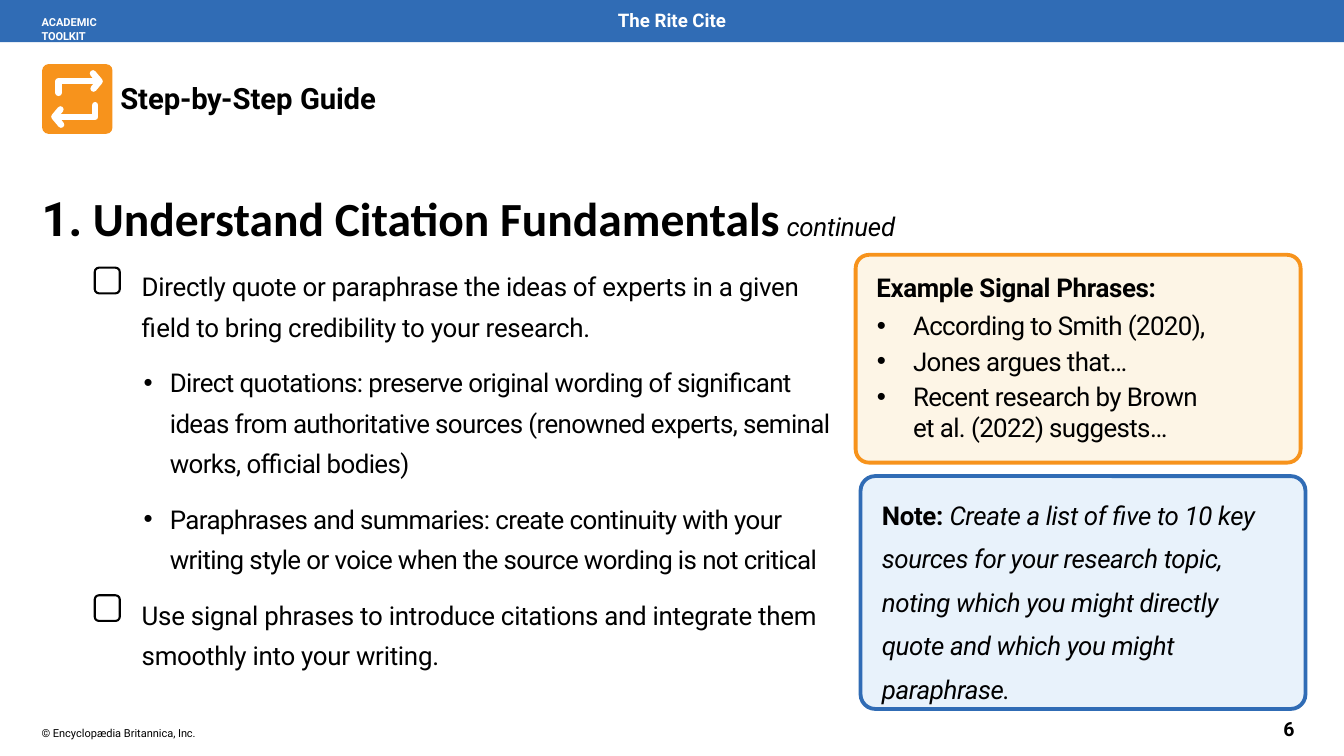
"""Build the citation fundamentals slide with its checklist, examples and note."""
import pptx
import pptx.util
import pptx.dml.color
import pptx.enum.shapes
import pptx.enum.text
import pptx.oxml

Inches = pptx.util.Inches
Pt = pptx.util.Pt
RGBColor = pptx.dml.color.RGBColor
SHAPES = pptx.enum.shapes.MSO_SHAPE

WHITE = RGBColor(0xFF, 0xFF, 0xFF)
BLACK = RGBColor(0x00, 0x00, 0x00)
BLUE = RGBColor(0x30, 0x6C, 0xB5)
PALE_BLUE = RGBColor(0xE8, 0xF2, 0xFB)
ORANGE = RGBColor(0xF7, 0x93, 0x1C)
PALE_ORANGE = RGBColor(0xFD, 0xF5, 0xE6)
NS = 'xmlns:a="http://schemas.openxmlformats.org/drawingml/2006/main"'
BODY = {"size": Pt(30.5)}
LABEL = {"indent": (0.01, 0)}

deck = pptx.Presentation()
deck.slide_width, deck.slide_height = Inches(21.99), Inches(12.37)
slide = deck.slides.add_slide(deck.slide_layouts[6])


def add_panel(kind, box, fill=None, line=None, width=0, corner=None):
    """Add a preset shape with a plain fill and outline."""
    panel = slide.shapes.add_shape(kind, *map(Inches, box))
    panel.shadow.inherit = False
    if corner is not None:
        panel.adjustments[0] = corner
    if fill is None:
        panel.fill.background()
    else:
        panel.fill.solid()
        panel.fill.fore_color.rgb = fill
    if line is None:
        panel.line.fill.background()
    else:
        panel.line.color.rgb = line
        panel.line.width = Pt(width)


def add_text(box, paragraphs, margins=(0, 0.02, 0, 0), color=BLACK):
    """Add a text box from (layout, runs) pairs; a run is (text, font, spacing)."""
    frame = slide.shapes.add_textbox(*map(Inches, box)).text_frame
    frame.word_wrap = True
    for side, margin in zip(("left", "top", "right", "bottom"), margins):
        setattr(frame, f"margin_{side}", Inches(margin))
    for number, (layout, runs) in enumerate(paragraphs):
        paragraph = frame.add_paragraph() if number else frame.paragraphs[0]
        layout = dict(layout)
        properties = paragraph._p.get_or_add_pPr()
        left, hanging = layout.pop("indent", (0, 0))
        if left:
            properties.set("marL", str(Inches(left)))
        if hanging:
            properties.set("indent", str(Inches(hanging)))
            for mark in ('buFont {} typeface="Arial"', 'buChar {} char="•"'):
                properties.append(pptx.oxml.parse_xml(f"<a:{mark.format(NS)}/>"))
        tab = layout.pop("tab", None)
        if tab:
            properties.append(pptx.oxml.parse_xml(
                f'<a:tabLst {NS}><a:tab pos="{Inches(tab)}" algn="l"/></a:tabLst>'))
        for name, value in layout.items():
            setattr(paragraph, name, value)
        for text, font, spacing in runs:
            run = paragraph.add_run()
            run.text = text
            for name, value in {"name": "Roboto", **font}.items():
                setattr(run.font, name, value)
            run.font.color.rgb = color
            run._r.get_or_add_rPr().set("spc", str(round(spacing * 100)))


add_panel(SHAPES.RECTANGLE, (0, 0, 21.99, 0.69), BLUE)
add_text((7.74, 0.13, 6.5, 0.39), [
    ({**LABEL, "alignment": pptx.enum.text.PP_ALIGN.CENTER},
     [("The Rite Cite", {"size": Pt(22), "bold": True}, 0)])], color=WHITE)
toolkit = {"size": Pt(13), "bold": True}
add_text((0.67, 0.24, 1.63, 0.25), [
    (LABEL, [("ACADEMIC ", toolkit, 0), ("TOOLKIT", toolkit, -0.1)])],
    margins=(0, 0.02, 0.2, 0), color=WHITE)

add_panel(SHAPES.ROUNDED_RECTANGLE, (0.69, 1.05, 1.15, 1.14), ORANGE, corner=0.09)
ARROW_STROKES = (
    ((0.96, 1.52), (0.96, 1.33), (1.62, 1.33)),
    ((1.52, 1.2), (1.63, 1.33), (1.53, 1.45)),
)
CENTER_X, CENTER_Y = 1.26, 1.62
for turn in (1, -1):
    for stroke in ARROW_STROKES:
        points = [(Inches(CENTER_X + turn * (x - CENTER_X)),
                   Inches(CENTER_Y + turn * (y - CENTER_Y))) for x, y in stroke]
        builder = slide.shapes.build_freeform(*points[0])
        builder.add_line_segments(points[1:], close=False)
        arrow = builder.convert_to_shape()
        arrow.shadow.inherit = False
        arrow.fill.background()
        arrow.line.color.rgb = WHITE
        arrow.line.width = Pt(7.5)
        outline = arrow.line._get_or_add_ln()
        outline.set("cap", "rnd")
        outline.append(pptx.oxml.parse_xml(f"<a:round {NS}/>"))

guide = {"size": Pt(34.5), "bold": True}
add_text((1.96, 1.3, 4.22, 0.61), [
    (LABEL, [("Step-", guide, -0.1), ("by-", guide, -0.7),
             ("Step ", guide, 0), ("Guide", guide, -0.1)])])

heading = {"size": Pt(56), "bold": True}
add_text((0.67, 3.08, 15.9, 0.96), [
    ({**LABEL, "tab": 0.84}, [
        ("1.\t", heading, -0.2),
        ("Understand Citation Fundamentals", {**heading, "name": "Calibri"}, 0),
        (" continued", {**BODY, "italic": True}, -0.3)])],
    margins=(0, 0.01, 0, 0))

step = {"indent": (1.48, 0), "line_spacing": 1.3}
detail = {"indent": (1.94, -0.43), "line_spacing": 1.3, "space_before": Pt(18)}
add_text((0.74, 4.23, 14.01, 6.78), [
    (step, [("Directly quote or paraphrase the ideas of experts in a given field "
             "to bring credibility to your research.", BODY, -0.3)]),
    (detail, [("Direct quotations: preserve original wording of significant ideas from "
               "authoritative sources (renowned experts, seminal works, official bodies)",
               BODY, -0.7)]),
    (detail, [("Paraphrases and summaries: create continuity with your writing style "
               "or voice when the source wording is not critical", BODY, -0.7)]),
    ({**step, "space_before": Pt(18)},
     [("Use signal phrases to introduce citations and integrate them smoothly "
       "into your writing.", BODY, -0.3)])],
    margins=(0.1, 0.05, 0.95, 0.05))
for checkbox_top in (4.38, 9.74):
    add_panel(SHAPES.ROUNDED_RECTANGLE, (1.55, checkbox_top, 0.41, 0.42),
              line=BLACK, width=2.47, corner=0.17)

add_panel(SHAPES.ROUNDED_RECTANGLE, (14, 4.17, 7.28, 3.4), PALE_ORANGE, ORANGE, 4.5, 0.064)
phrase = {"indent": (0.6, -0.59), "space_after": Pt(5.2)}
add_text((14.24, 4.4, 6.82, 2.92), [
    ({}, [("Example Signal Phrases:", {**BODY, "bold": True}, -0.4)]),
    ({**phrase, "space_before": Pt(8)}, [("According to Smith (2020),", BODY, -0.7)]),
    (phrase, [("Jones argues that…", BODY, -0.7)]),
    (phrase, [("Recent research by Brown et al. (2022) suggests…", BODY, -0.7)])],
    margins=(0.1, 0.05, 1.3, 0.05))

add_panel(SHAPES.ROUNDED_RECTANGLE, (14.08, 7.79, 7.28, 3.81), PALE_BLUE, BLUE, 4.5, 0.063)
add_text((14.33, 7.92, 6.79, 2.88), [
    ({"line_spacing": 1.4}, [
        ("Note: ", {**BODY, "bold": True}, -0.4),
        ("Create a list of five to 10 key sources for your research topic, noting which "
         "you might directly quote and which you might paraphrase.",
         {**BODY, "italic": True}, -0.4)])],
    margins=(0.1, 0.05, 0.1, 0.05))

add_text((20.99, 11.72, 0.37, 0.41), [
    (LABEL, [("6", {"size": Pt(23), "bold": True}, -0.2)])], margins=(0, 0.01, 0, 0))
imprint = {"size": Pt(13)}
add_text((0.67, 11.86, 2.57, 0.25), [
    (LABEL, [("© Encyclopædia Britannica, ", imprint, 0), ("Inc.", imprint, -0.2)])])

deck.save("out.pptx")
